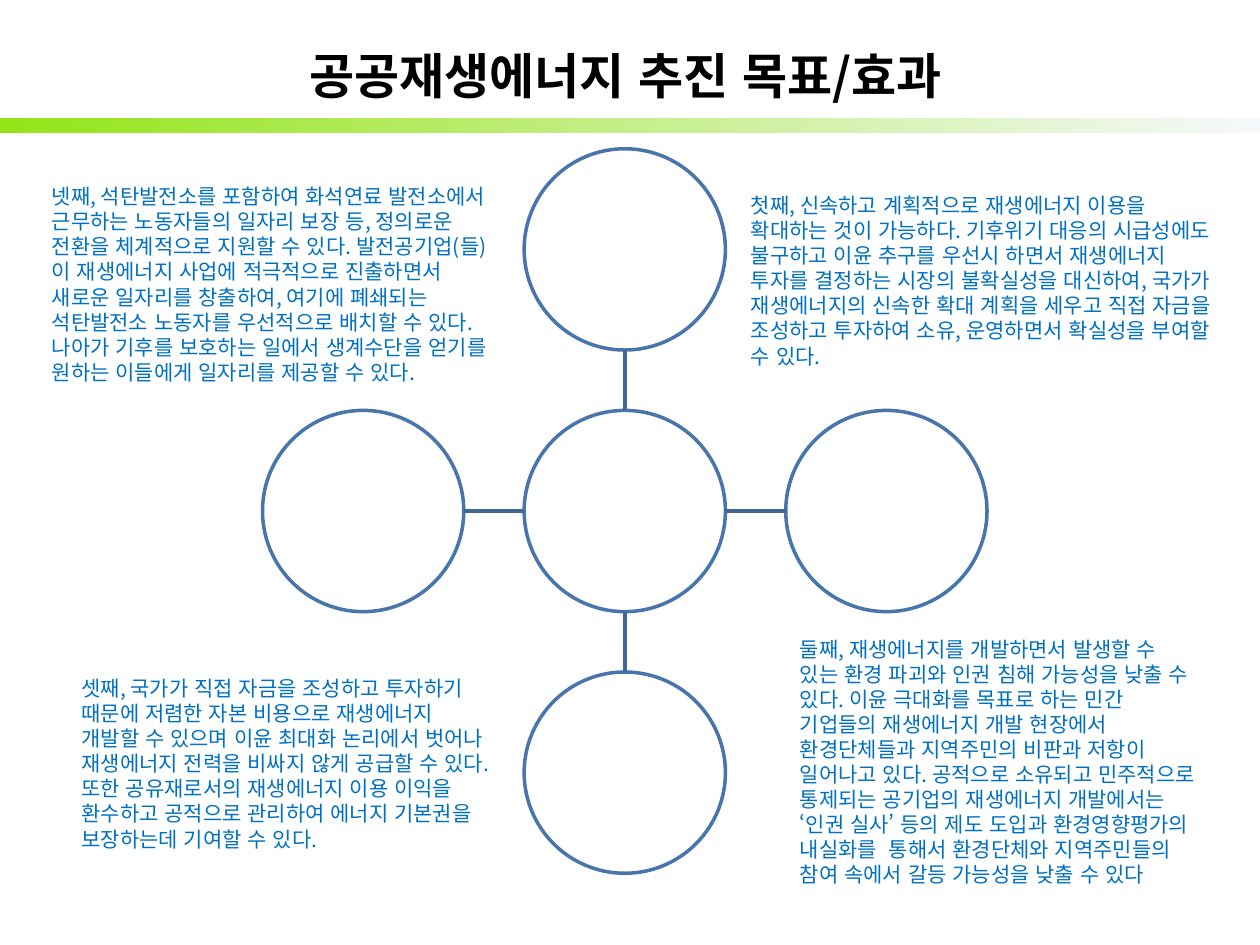
"""Build the slide on goals and effects of public renewable energy."""
import pptx
import pptx.dml.color
import pptx.enum.dml
import pptx.enum.lang
import pptx.enum.shapes
import pptx.enum.text
import pptx.oxml
import pptx.oxml.ns
import pptx.util

Pt = pptx.util.Pt
FONT = "Noto Sans CJK KR"
COLORS = {
    "title": "000000",
    "body": "0070C0",
    "ring": "4875AC",
    "link": "3F6797",
    "circle": "FFFFFF",
    "bar_start": "94E417",
    "bar_end": "F6F9FC",
}


def color(name):
    return pptx.dml.color.RGBColor.from_string(COLORS[name])


def format_text(para, size, color_name, bold):
    for span in para.runs:
        span.font.name = FONT
        span.font.size = Pt(size)
        span.font.bold = bold
        span.font.color.rgb = color(color_name)
        span.font.language_id = pptx.enum.lang.MSO_LANGUAGE_ID.KOREAN
        east_asian = pptx.oxml.parse_xml(
            f'<a:ea {pptx.oxml.ns.nsdecls("a")} typeface="{FONT}"/>')
        span.font._element.find(pptx.oxml.ns.qn("a:latin")).addnext(east_asian)


deck = pptx.Presentation()
deck.slide_width, deck.slide_height = Pt(720), Pt(540)
page = deck.slides.add_slide(deck.slide_layouts[5])

title = page.shapes.title
title.left, title.top, title.width, title.height = Pt(20), Pt(15), Pt(675), Pt(56)
title.text_frame.text = "공공재생에너지 추진 목표/효과"
title.text_frame.vertical_anchor = pptx.enum.text.MSO_ANCHOR.MIDDLE
title.text_frame.paragraphs[0].alignment = pptx.enum.text.PP_ALIGN.CENTER
format_text(title.text_frame.paragraphs[0], 28, "title", True)

bar = page.shapes.add_shape(
    pptx.enum.shapes.MSO_SHAPE.RECTANGLE, 0, Pt(67.5), Pt(720), Pt(8.5))
bar.shadow.inherit = False
bar.line.fill.background()
bar.fill.gradient()
bar.fill.gradient_angle = 0
for stop, position, name in zip(bar.fill.gradient_stops, (0, 1), ("bar_start", "bar_end")):
    stop.position = position
    stop.color.rgb = color(name)

center_x, center_y, radius, step = 357, 292, 57.5, 149.5
for across, down in ((0, 0), (0, -1), (1, 0), (0, 1), (-1, 0)):
    circle = page.shapes.add_shape(
        pptx.enum.shapes.MSO_SHAPE.OVAL,
        Pt(center_x + across * step - radius), Pt(center_y + down * step - radius),
        Pt(2 * radius), Pt(2 * radius))
    circle.shadow.inherit = False
    circle.fill.solid()
    circle.fill.fore_color.rgb = color("circle")
    circle.line.color.rgb = color("ring")
    circle.line.width = Pt(2)
    if across or down:
        far = step - radius
        link = page.shapes.add_connector(
            pptx.enum.shapes.MSO_CONNECTOR.STRAIGHT,
            Pt(center_x + across * radius), Pt(center_y + down * radius),
            Pt(center_x + across * far), Pt(center_y + down * far))
        link.line.color.rgb = color("link")
        link.line.width = Pt(2)
        link._element.spPr.append(pptx.oxml.parse_xml(
            f'<a:effectLst {pptx.oxml.ns.nsdecls("a")}/>'))

goals = (
    (422, 106.5, 281.5, 94.5,
     "첫째, 신속하고 계획적으로 재생에너지 이용을 확대하는 것이 가능하다. 기후위기 대응의 "
     "시급성에도 불구하고 이윤 추구를 우선시 하면서 재생에너지 투자를 결정하는 시장의 불확실성을 "
     "대신하여, 국가가 재생에너지의 신속한 확대 계획을 세우고 직접 자금을 조성하고 투자하여 소유, "
     "운영하면서 확실성을 부여할 수 있다."),
    (450, 360, 242, 152.5,
     "둘째, 재생에너지를 개발하면서 발생할 수 있는 환경 파괴와 인권 침해 가능성을 낮출 수 있다. "
     "이윤 극대화를 목표로 하는 민간 기업들의 재생에너지 개발 현장에서 환경단체들과 지역주민의 "
     "비판과 저항이 일어나고 있다. 공적으로 소유되고 민주적으로 통제되는 공기업의 재생에너지 "
     "개발에서는 ‘인권 실사’ 등의 제도 도입과 환경영향평가의 내실화를  통해서 환경단체와 "
     "지역주민들의 참여 속에서 갈등 가능성을 낮출 수 있다"),
    (39.5, 382.5, 247.5, 108.5,
     "셋째, 국가가 직접 자금을 조성하고 투자하기 때문에 저렴한 자본 비용으로 재생에너지 개발할 수 "
     "있으며 이윤 최대화 논리에서 벗어나 재생에너지 전력을 비싸지 않게 공급할 수 있다. 또한 "
     "공유재로서의 재생에너지 이용 이익을 환수하고 공적으로 관리하여 에너지 기본권을 보장하는데 "
     "기여할 수 있다."),
    (22.5, 101.5, 270, 124,
     "넷째, 석탄발전소를 포함하여 화석연료 발전소에서 근무하는 노동자들의 일자리 보장 등, 정의로운 "
     "전환을 체계적으로 지원할 수 있다. 발전공기업(들)이 재생에너지 사업에 적극적으로 진출하면서 "
     "새로운 일자리를 창출하여, 여기에 폐쇄되는 석탄발전소 노동자를 우선적으로 배치할 수 있다. "
     "나아가 기후를 보호하는 일에서 생계수단을 얻기를 원하는 이들에게 일자리를 제공할 수 있다."),
)
for left, top, width, height, words in goals:
    box = page.shapes.add_textbox(Pt(left), Pt(top), Pt(width), Pt(height))
    box.text_frame.word_wrap = True
    box.text_frame.auto_size = pptx.enum.text.MSO_AUTO_SIZE.SHAPE_TO_FIT_TEXT
    box.text_frame.text = words
    para = box.text_frame.paragraphs[0]
    para.line_spacing = Pt(14.35)
    format_text(para, 12, "body", False)

deck.save("out.pptx")
